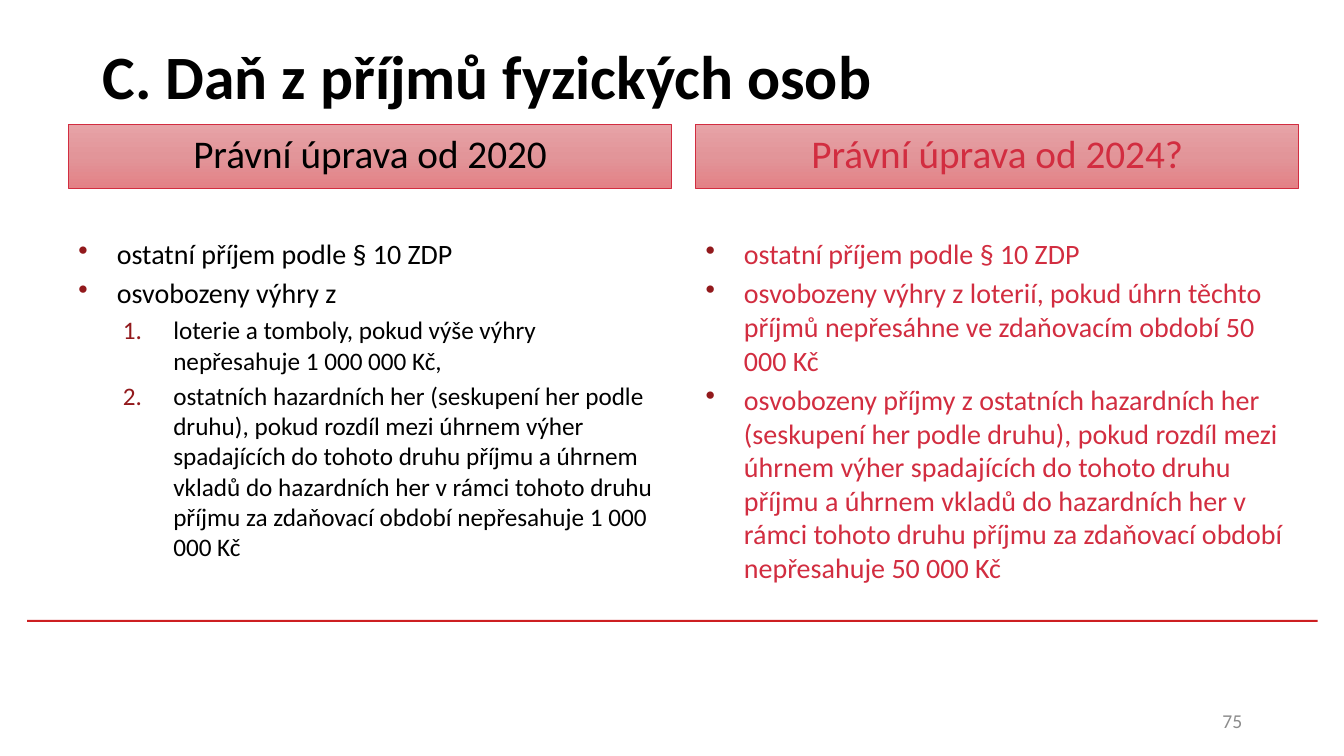
from copy import deepcopy

from lxml import etree
from pptx import Presentation
from pptx import util as u
from pptx.dml.color import RGBColor
from pptx.enum import shapes, text
from pptx.oxml.ns import qn

COLORS = {
    "black": "000000",
    "red": "D22D40",
    "bullet": "92191C",
    "rule": "CD1F21",
    "number": "8C8C8C",
}
HEADER_STOPS = ["E7A3A7", "E29599", "E38186"]

LEVELS = {
    "item": {"size": 20, "margin": 0.38, "hanging": 0.38, "bullet": ("a:buChar", "char", "•")},
    "numbered": {"size": 18, "margin": 0.94, "hanging": 0.5, "bullet": ("a:buAutoNum", "type", "arabicPeriod")},
}

COLUMNS = [
    ("Právní úprava od 2020", "black", [
        ("item", "ostatní příjem podle § 10 ZDP"),
        ("item", "osvobozeny výhry z"),
        ("numbered", "loterie a tomboly, pokud výše výhry nepřesahuje 1 000 000 Kč,"),
        ("numbered", "ostatních hazardních her (seskupení her podle druhu), pokud rozdíl mezi úhrnem "
                     "výher spadajících do tohoto druhu příjmu a úhrnem vkladů do hazardních her "
                     "v rámci tohoto druhu příjmu za zdaňovací období nepřesahuje 1 000 000 Kč"),
    ]),
    ("Právní úprava od 2024?", "red", [
        ("item", "ostatní příjem podle § 10 ZDP"),
        ("item", "osvobozeny výhry z loterií, pokud úhrn těchto příjmů nepřesáhne "
                 "ve zdaňovacím období 50 000 Kč"),
        ("item", "osvobozeny příjmy z ostatních hazardních her (seskupení her podle druhu), pokud "
                 "rozdíl mezi úhrnem výher spadajících do tohoto druhu příjmu a úhrnem vkladů do "
                 "hazardních her v rámci tohoto druhu příjmu za zdaňovací období nepřesahuje 50 000 Kč"),
    ]),
]


def write(paragraph, words, color, **formats):
    paragraph.text = words
    font = paragraph.font
    for name, value in {"name": "Calibri", **formats}.items():
        setattr(font, name, value)
    font.color.rgb = RGBColor.from_string(COLORS[color])


def add_text_frame(left, top, width, height, anchor):
    box = slide.shapes.add_textbox(*map(u.Inches, (left, top, width, height)))
    frame = box.text_frame
    for name, value in {"word_wrap": True, "vertical_anchor": anchor}.items():
        setattr(frame, name, value)
    return frame


deck = Presentation()
deck.slide_width = u.Inches(13.33)
deck.slide_height = u.Inches(7.5)
slide = deck.slides.add_slide(deck.slide_layouts[6])

rule = slide.shapes.add_shape(
    shapes.MSO_SHAPE.RECTANGLE, u.Inches(0.27), u.Inches(6.15), u.Inches(12.8), u.Inches(0.02))
rule.shadow.inherit = False
rule.fill.solid()
rule.fill.fore_color.rgb = RGBColor.from_string(COLORS["rule"])
rule.line.fill.background()

title = add_text_frame(0.92, 0.02, 11.5, 1.45, text.MSO_ANCHOR.MIDDLE)
write(title.paragraphs[0], "C. Daň z příjmů fyzických osob", "black", size=u.Pt(44), bold=True)

page_number = add_text_frame(9.42, 6.95, 3, 0.4, text.MSO_ANCHOR.MIDDLE).paragraphs[0]
page_number.alignment = text.PP_ALIGN.RIGHT
write(page_number, "75", "number", size=u.Pt(14))

column_width = 5.98
for column, (heading, color, points) in enumerate(COLUMNS):
    left = 0.68 + column * 6.22

    header = slide.shapes.add_shape(
        shapes.MSO_SHAPE.RECTANGLE, u.Inches(left), u.Inches(1.23), u.Inches(column_width), u.Inches(0.64))
    header.shadow.inherit = False
    header.fill.gradient()
    header.fill.gradient_angle = 270
    stop_list = header.fill.gradient_stops[0]
    gradient = header.element.spPr.find(qn("a:gradFill")).find(qn("a:gsLst"))
    gradient.insert(1, deepcopy(gradient[0]))
    for index, (stop, shade) in enumerate(zip(header.fill.gradient_stops, HEADER_STOPS)):
        stop.color.rgb = RGBColor.from_string(shade)
        stop.position = index / 2
    header.line.color.rgb = RGBColor.from_string(COLORS["red"])
    header.line.width = u.Pt(0.5)
    header.text_frame.vertical_anchor = text.MSO_ANCHOR.TOP
    label = header.text_frame.paragraphs[0]
    label.alignment = text.PP_ALIGN.CENTER
    write(label, heading, color, size=u.Pt(28))

    body = add_text_frame(left, 2.3, column_width, 3.96, text.MSO_ANCHOR.TOP)
    for index, (level, words) in enumerate(points):
        style = LEVELS[level]
        paragraph = body.add_paragraph() if index else body.paragraphs[0]
        if index:
            paragraph.space_before = u.Pt(style["size"] * 0.2)
        if level == "numbered":
            paragraph.level = 1
        properties = paragraph._p.get_or_add_pPr()
        properties.set("marL", str(u.Inches(style["margin"])))
        properties.set("indent", str(-u.Inches(style["hanging"])))
        bullet_color = etree.SubElement(properties, qn("a:buClr"))
        etree.SubElement(bullet_color, qn("a:srgbClr"), val=COLORS["bullet"])
        tag, attribute, value = style["bullet"]
        etree.SubElement(properties, qn(tag), {attribute: value})
        write(paragraph, words, color, size=u.Pt(style["size"]))

deck.save("out.pptx")
